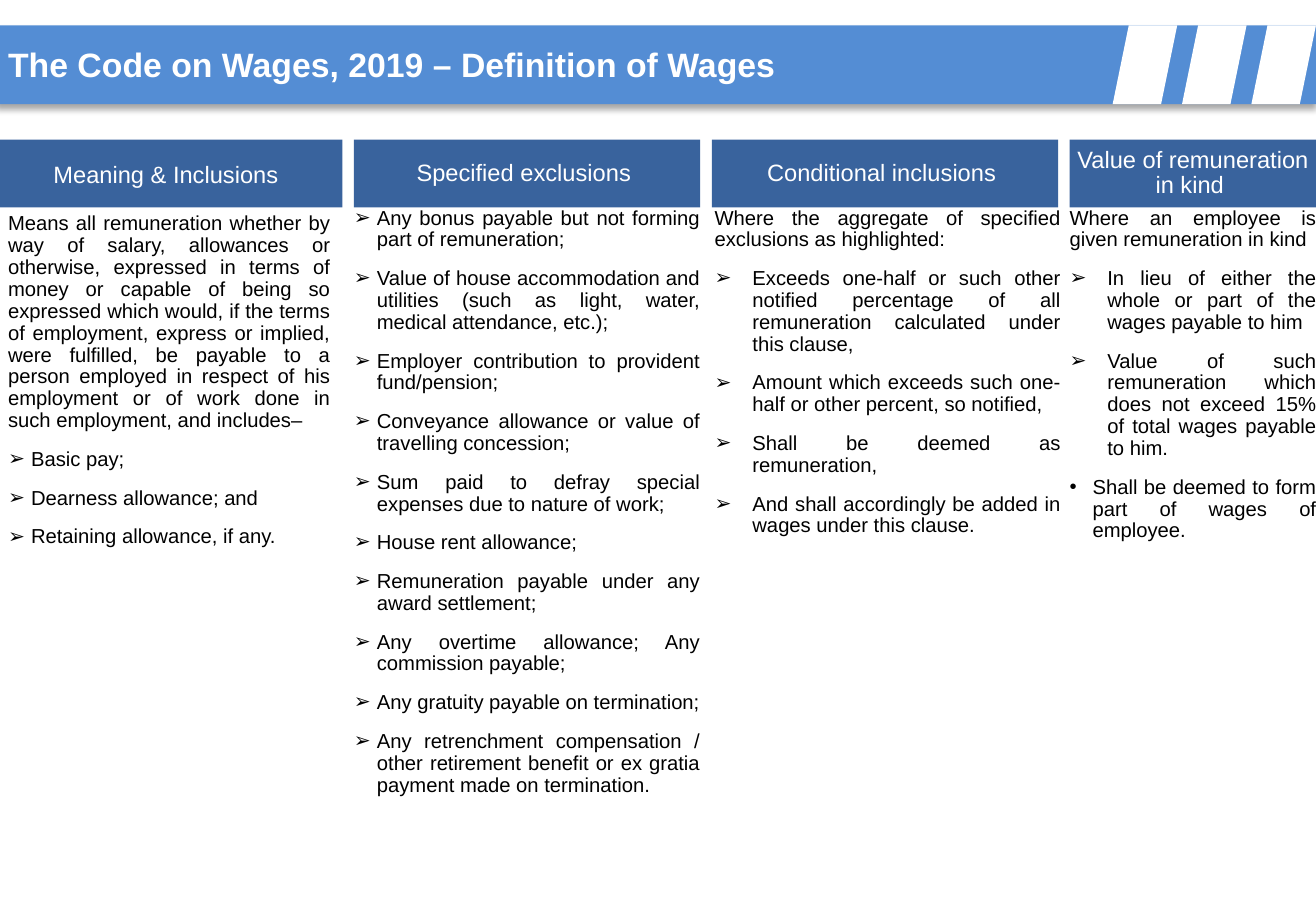
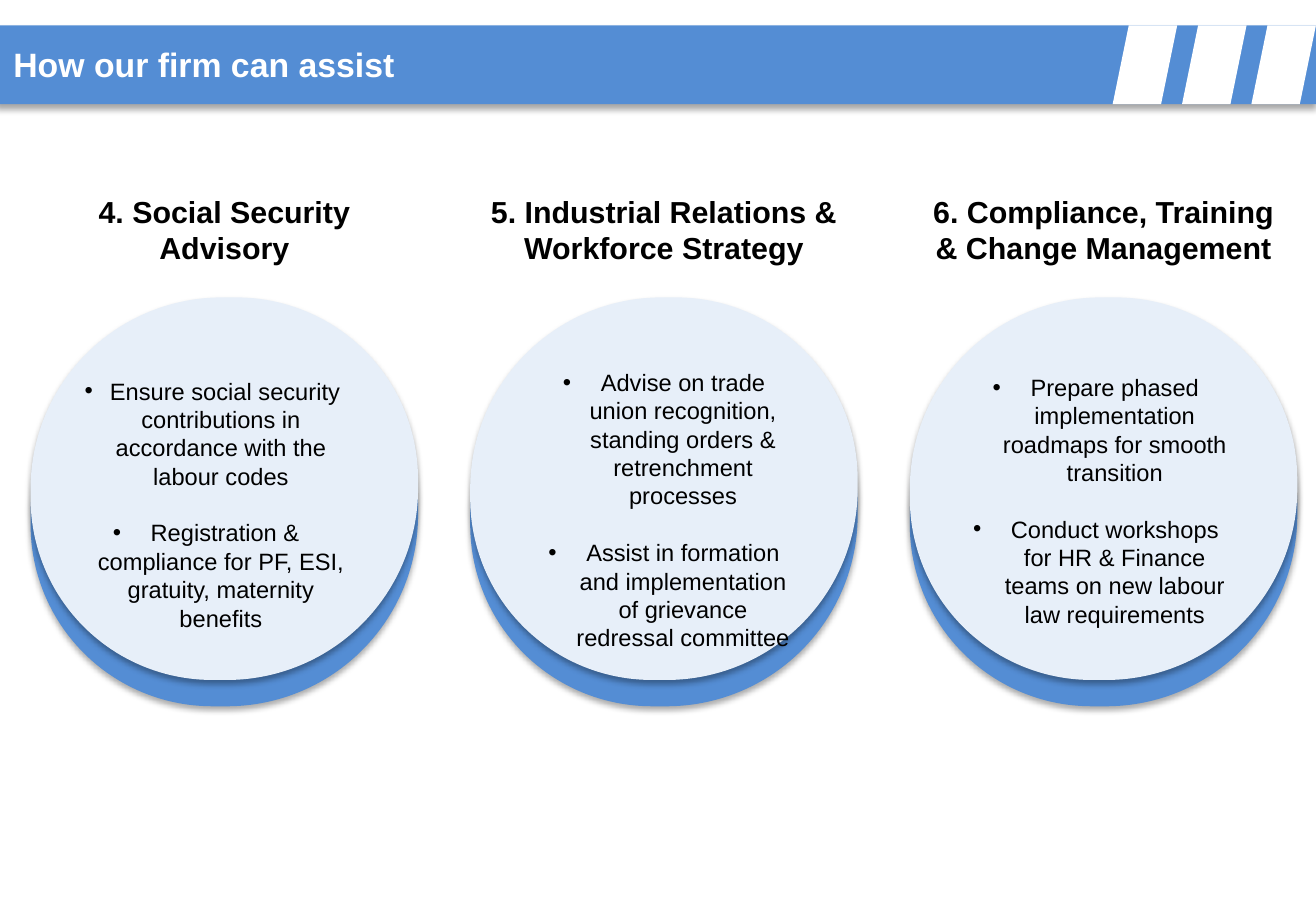
import dataclasses

import lxml.etree
import pptx
import pptx.dml.color
import pptx.enum.shapes
import pptx.enum.text
import pptx.oxml.ns
import pptx.util

Cm = pptx.util.Cm
Pt = pptx.util.Pt
RGB = pptx.dml.color.RGBColor.from_string
PRESET = pptx.enum.shapes.MSO_SHAPE
ALIGN = pptx.enum.text.PP_ALIGN
ANCHOR = pptx.enum.text.MSO_ANCHOR


@dataclasses.dataclass(frozen=True)
class Theme:
    font: str = "Arial"
    band: str = "548DD4"
    column_head: str = "39639D"
    disc: str = "E7EFF9"
    light: str = "FFFFFF"
    dark: str = "000000"
    title_size: float = 20
    heading_size: float = 18
    label_size: float = 14
    body_size: float = 12


@dataclasses.dataclass(frozen=True)
class Box:
    """A rectangle in centimetres."""
    left: float
    top: float
    width: float
    height: float

    def lengths(self):
        return [Cm(v) for v in (self.left, self.top, self.width, self.height)]


@dataclasses.dataclass(frozen=True)
class Style:
    size: float
    color: str
    bold: bool = False
    align: ALIGN = ALIGN.LEFT
    line_spacing: float = 1.0
    gap: float = 0


@dataclasses.dataclass(frozen=True)
class Item:
    """A bulleted paragraph; hanging and margin are in centimetres."""
    text: str
    mark: str = "➢"
    hanging: float = 0.48
    margin: float = 0.48


THEME = Theme()
SLIDE_WIDTH, SLIDE_HEIGHT = 27.51, 19.05
BAND = Box(-0.1, 0.53, 27.61, 1.65)
BAND_SHADOW = (35, 4, 3)
DISC_SHADOW = (32, 3.5, 2.2)
WIDE_HANGING = 0.79


def add_child(parent, tag, **attributes):
    child = lxml.etree.SubElement(parent, pptx.oxml.ns.qn(tag))
    for key, value in attributes.items():
        child.set(key, str(value))
    return child


def add_filled(slide, preset, box, color, shadow=None):
    """Shadow is (opacity in percent, blur in points, distance in points)."""
    shape = slide.shapes.add_shape(preset, *box.lengths())
    shape.shadow.inherit = False
    shape.fill.solid()
    shape.fill.fore_color.rgb = RGB(color)
    shape.line.fill.background()
    if shadow:
        opacity, blur, distance = shadow
        effects = shape._element.spPr.find(pptx.oxml.ns.qn("a:effectLst"))
        outer = add_child(effects, "a:outerShdw", blurRad=int(Pt(blur)),
                          dist=int(Pt(distance)), dir=5400000, rotWithShape=0)
        tint = add_child(outer, "a:srgbClr", val=THEME.dark)
        add_child(tint, "a:alpha", val=opacity * 1000)
    return shape


def add_bullet(paragraph, item):
    properties = paragraph._p.get_or_add_pPr()
    properties.set("marL", str(int(Cm(item.margin))))
    properties.set("indent", str(int(Cm(-item.hanging))))
    add_child(properties, "a:buFont", typeface=THEME.font)
    add_child(properties, "a:buChar", char=item.mark)


def write(frame, content, style, inset=True):
    frame.word_wrap = True
    if not inset:
        frame.margin_left = frame.margin_right = 0
        frame.margin_top = frame.margin_bottom = 0
    for index, entry in enumerate(content):
        paragraph = frame.add_paragraph() if index else frame.paragraphs[0]
        if isinstance(entry, Item):
            paragraph.text = entry.text
            add_bullet(paragraph, entry)
        else:
            paragraph.text = entry
        paragraph.alignment = style.align
        paragraph.line_spacing = style.line_spacing
        paragraph.space_before = Pt(style.gap if index else 0)
        for run in paragraph.runs:
            run.font.name = THEME.font
            run.font.size = Pt(style.size)
            run.font.bold = style.bold
            run.font.color.rgb = RGB(style.color)


def add_text(slide, box, content, style, inset=True):
    write(slide.shapes.add_textbox(*box.lengths()).text_frame, content, style, inset)


def add_title_band(slide, title, title_left, box=BAND):
    add_filled(slide, PRESET.RECTANGLE, box, THEME.band, BAND_SHADOW)
    stripe_width, stripe_step = 1.35, 1.45
    right = box.left + box.width
    for place in range(3):
        left = right - stripe_width - place * stripe_step
        add_filled(slide, PRESET.PARALLELOGRAM,
                   Box(left, box.top, stripe_width, box.height), THEME.light)
    add_text(slide, Box(title_left, box.top + 0.26, 24, 1.12), [title],
             Style(THEME.title_size, THEME.light, bold=True))


def add_column(slide, box, heading, content, inset=False, body_shift=0):
    """Filled heading with justified text under it."""
    head_height = 1.42
    head = add_filled(slide, PRESET.RECTANGLE,
                      Box(box.left, box.top, box.width, head_height), THEME.column_head)
    head.text_frame.vertical_anchor = ANCHOR.MIDDLE
    write(head.text_frame, [heading],
          Style(THEME.label_size, THEME.light, align=ALIGN.CENTER,
                line_spacing=1.0 if inset else 0.9), inset)
    body = Box(box.left + body_shift, box.top + head_height,
               box.width, box.height - head_height)
    add_text(slide, body, content,
             Style(THEME.body_size, THEME.dark, align=ALIGN.JUSTIFY,
                   line_spacing=0.9, gap=10), inset)


def add_disc_card(slide, box, heading, heading_width, items, items_box):
    """Heading centred over a disc; items_box is relative to the disc."""
    rim_drop = 0.55
    for drop, color in ((rim_drop, THEME.band), (0, THEME.disc)):
        disc = add_filled(slide, PRESET.ROUND_2_DIAG_RECTANGLE,
                          Box(box.left, box.top + drop, box.width, box.height),
                          color, DISC_SHADOW)
        disc.adjustments[0], disc.adjustments[1] = 0.5, 0.475
    heading_left = box.left + (box.width - heading_width) / 2
    add_text(slide, Box(heading_left, box.top - 2.31, heading_width, 1.8), [heading],
             Style(THEME.heading_size, THEME.dark, bold=True, align=ALIGN.CENTER))
    placed = dataclasses.replace(items_box, left=box.left + items_box.left,
                                 top=box.top + items_box.top)
    add_text(slide, placed, items,
             Style(THEME.label_size, THEME.dark, align=ALIGN.CENTER, gap=16.8))


def build_wages_slide(slide):
    add_title_band(slide, "The Code on Wages, 2019 – Definition of Wages", -0.08)
    inclusions = [
        "Means all remuneration whether by way of salary, allowances or otherwise, "
        "expressed in terms of money or capable of being so expressed which would, "
        "if the terms of employment, express or implied, were fulfilled, be payable "
        "to a person employed in respect of his employment or of work done in such "
        "employment, and includes– ",
        Item("Basic pay;"),
        Item("Dearness allowance; and"),
        Item("Retaining allowance, if any."),
    ]
    exclusions = [Item(text) for text in (
        "Any bonus payable but not forming part of remuneration;",
        "Value of house accommodation and utilities (such as light, water, "
        "medical attendance, etc.);",
        "Employer contribution to provident fund/pension;",
        "Conveyance allowance or value of travelling concession;",
        "Sum paid to defray special expenses due to nature of work;",
        "House rent allowance;",
        "Remuneration payable under any award settlement;",
        "Any overtime allowance; Any commission payable;",
        "Any gratuity payable on termination;",
        "Any retrenchment compensation / other retirement benefit or ex "
        "gratia payment made on termination.",
    )]
    conditions = ["Where the aggregate of specified exclusions as highlighted:"] + [
        Item(text, hanging=WIDE_HANGING, margin=WIDE_HANGING) for text in (
            "Exceeds one-half or such other notified percentage of all remuneration "
            "calculated under this clause,",
            "Amount which exceeds such one-half or other percent, so notified,",
            "Shall be deemed as remuneration,",
            "And shall accordingly be added in wages under this clause.",
        )]
    in_kind = ["Where an employee is given remuneration in kind"] + [
        Item(text, hanging=WIDE_HANGING, margin=WIDE_HANGING) for text in (
            "In lieu of either the whole or part of the wages payable to him",
            "Value of such remuneration which does not exceed 15% of total wages "
            "payable to him.",
        )] + [Item("Shall be deemed to form part of wages of employee.", mark="•")]

    columns = [
        (7.24, "Meaning & Inclusions ", inclusions, {"inset": True}),
        (7.24, "Specified exclusions ", exclusions, {}),
        (7.24, "Conditional inclusions ", conditions, {"body_shift": 0.06}),
        (5.16, "Value of remuneration in kind ", in_kind, {}),
    ]
    left, column_gap = -0.08, 0.24
    for width, heading, content, options in columns:
        add_column(slide, Box(left, 2.92, width, 14.25), heading, content, **options)
        left += width + column_gap


def build_assist_slide(slide):
    add_title_band(slide, "How our firm can assist", 0.03)
    cards = [
        ("4. Social Security Advisory", 7.21, Box(0.88, 1.53, 6.2, 5.64), 0, (
            "Ensure social security contributions in accordance with the labour codes",
            "Registration & compliance for PF, ESI, gratuity, maternity benefits")),
        ("5. Industrial Relations & Workforce Strategy", 8.53,
         Box(1.02, 1.35, 6.07, 6.25), WIDE_HANGING, (
             "Advise on trade union recognition, standing orders & retrenchment processes",
             "Assist in formation and implementation of grievance redressal committee")),
        ("6. Compliance, Training & Change Management", 8.08,
         Box(0.79, 1.45, 6.2, 5.64), WIDE_HANGING, (
             "Prepare phased implementation roadmaps for smooth transition",
             "Conduct workshops for HR & Finance teams on new labour law requirements")),
    ]
    first_left, step = 0.64, 9.19
    for place, (heading, heading_width, items_box, margin, texts) in enumerate(cards):
        items = [Item(text, "•", WIDE_HANGING, margin) for text in texts]
        add_disc_card(slide, Box(first_left + place * step, 6.22, 8.1, 8),
                      heading, heading_width, items, items_box)


def main():
    deck = pptx.Presentation()
    deck.slide_width, deck.slide_height = Cm(SLIDE_WIDTH), Cm(SLIDE_HEIGHT)
    blank = deck.slide_layouts[6]
    for build in (build_wages_slide, build_assist_slide):
        build(deck.slides.add_slide(blank))
    deck.save("out.pptx")


if __name__ == "__main__":
    main()
